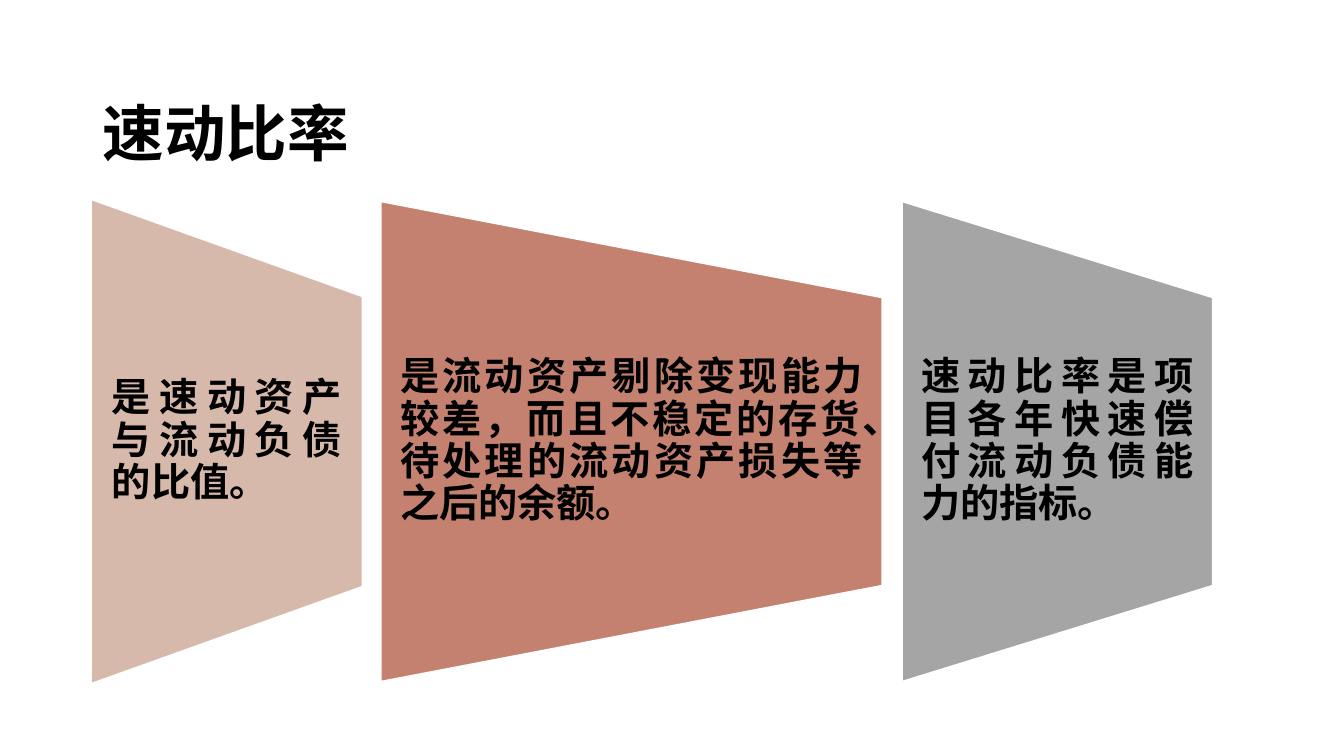
from pptx import Presentation
from pptx import util as u
from pptx.dml import color
from pptx.enum import shapes, text

SLIDE_WIDTH, SLIDE_HEIGHT = u.Inches(13.333), u.Inches(7.5)
LEFT, GAP = 6.9, 1.5
PANEL_MIDDLE, PANEL_HEIGHT, LABEL_HEIGHT = 58.4, 63.47, 38.13
PANELS = [
    (19.95, "D7B9AB", "D7B9AB", "是速动资产与流动负债的比值。"),
    (37.28, "C48170", "FFFFFF",
     "是流动资产剔除变现能力较差，而且不稳定的存货、待处理的流动资产损失等之后的余额。"),
    (23.1, "A5A5A5", "FFFFFF", "速动比率是项目各年快速偿付流动负债能力的指标。"),
]


def across(percent):
    """Return a percentage of the slide's width as a length."""
    return u.Emu(round(SLIDE_WIDTH * percent / 100))


def down(percent):
    """Return a percentage of the slide's height as a length."""
    return u.Emu(round(SLIDE_HEIGHT * percent / 100))


def rgb(value):
    """Return the colour for a hex string."""
    return color.RGBColor.from_string(value)


def add_text(page, wording, left, top, width, height, *, size, spacing,
             inset=(0.1, 0.05), ink="000000", font="Times New Roman"):
    """Add a bold, justified, vertically centred text box."""
    box = page.shapes.add_textbox(across(left), down(top), across(width), down(height))
    frame = box.text_frame
    frame.word_wrap = True
    frame.vertical_anchor = text.MSO_ANCHOR.MIDDLE
    frame.margin_left = frame.margin_right = u.Inches(inset[0])
    frame.margin_top = frame.margin_bottom = u.Inches(inset[1])
    para = frame.paragraphs[0]
    para.alignment = text.PP_ALIGN.JUSTIFY
    para.line_spacing = spacing
    span = para.add_run()
    span.text = wording
    span.font.name = font
    span.font.size = u.Pt(size)
    span.font.bold = True
    span.font.color.rgb = rgb(ink)


def add_panel(page, left, width, fill, outline):
    """Add a trapezoid turned so that its wide side faces left."""
    length, depth = down(PANEL_HEIGHT), across(width)
    panel = page.shapes.add_shape(
        shapes.MSO_SHAPE.FLOWCHART_MANUAL_OPERATION,
        across(left) + (depth - length) // 2,
        down(PANEL_MIDDLE) - depth // 2, length, depth)
    panel.rotation = 270
    panel.shadow.inherit = False
    panel.fill.solid()
    panel.fill.fore_color.rgb = rgb(fill)
    panel.line.color.rgb = rgb(outline)
    panel.line.width = u.Pt(1)


def main():
    """Build the slide and save it."""
    deck = Presentation()
    deck.slide_width, deck.slide_height = SLIDE_WIDTH, SLIDE_HEIGHT
    page = deck.slides.add_slide(deck.slide_layouts[6])
    add_text(page, "速动比率", LEFT, 5.33, 86.25, 19.33, size=44, spacing=1.5)
    left = LEFT
    for width, fill, outline, wording in PANELS:
        add_panel(page, left, width, fill, outline)
        add_text(page, wording, left, PANEL_MIDDLE - LABEL_HEIGHT / 2, width,
                 LABEL_HEIGHT, size=28, spacing=0.9, inset=(0.19, 0))
        left += width + GAP
    deck.save("out.pptx")


if __name__ == "__main__":
    main()
